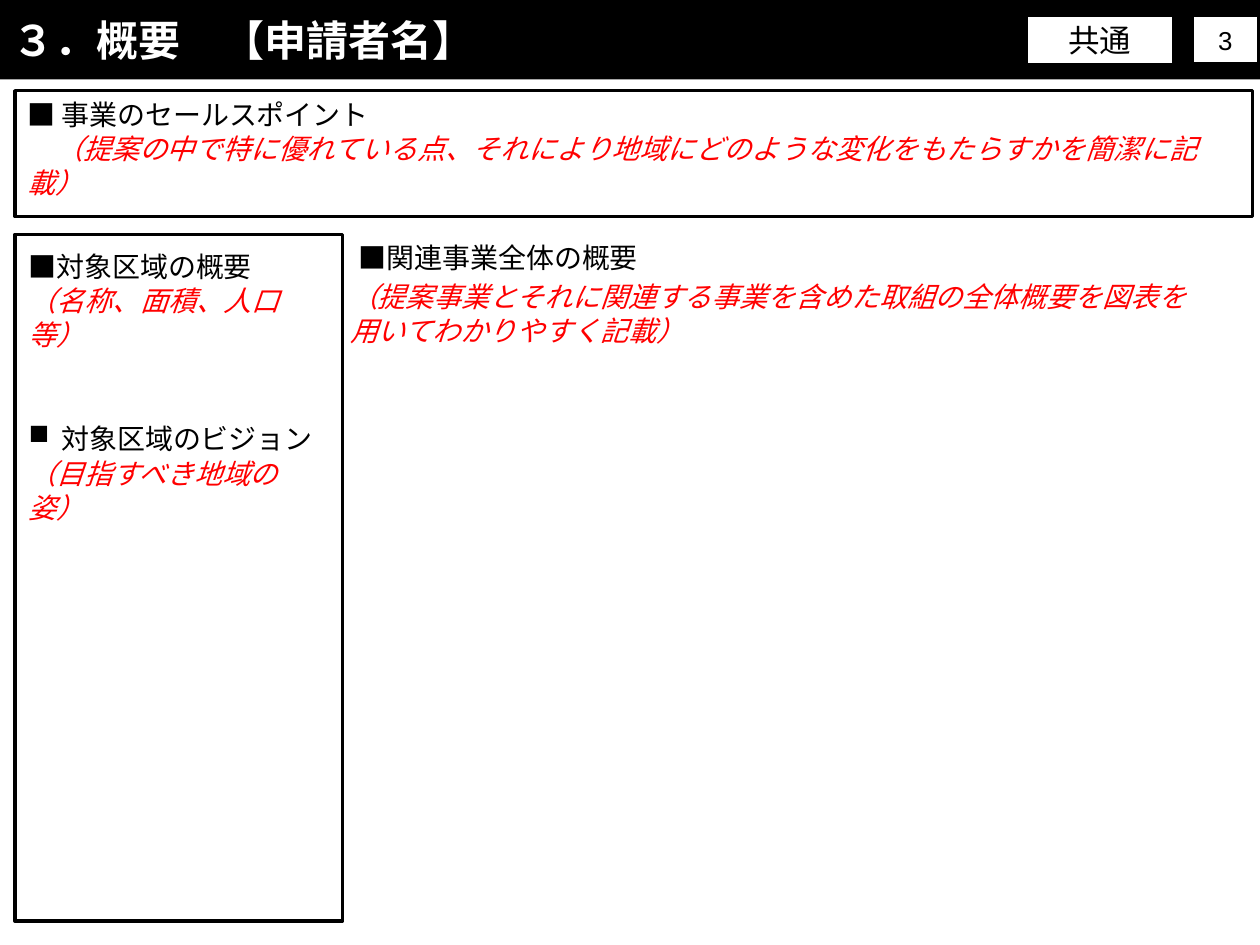
import dataclasses

import lxml.etree
import pptx
import pptx.dml.color
import pptx.enum.shapes
import pptx.enum.text
import pptx.oxml.ns
import pptx.util

COLUMNS, ROWS = 100, 75
CELL = pptx.util.Inches(0.1)


@dataclasses.dataclass(frozen=True)
class Theme:
    black: str = "000000"
    white: str = "FFFFFF"
    guidance: str = "FF0000"
    latin: str = "Arial"
    japanese: str = "Noto Sans CJK JP"
    bullet_item: str = "Cabin"
    title_size: float = 24
    label_size: float = 18
    number_size: float = 14.8
    body_size: float = 16
    body_line: float = 19.4


THEME = Theme()


def color(value):
    return pptx.dml.color.RGBColor.from_string(value)


def place(column, row, width, height):
    return [round(length * CELL) for length in (column, row, width, height)]


def add_box(slide, area, fill=None, line=None, line_width=2):
    box = slide.shapes.add_shape(
        pptx.enum.shapes.MSO_SHAPE.RECTANGLE, *place(*area))
    box.shadow.inherit = False
    if fill:
        box.fill.solid()
        box.fill.fore_color.rgb = color(fill)
    else:
        box.fill.background()
    if line:
        box.line.color.rgb = color(line)
        box.line.width = pptx.util.Pt(line_width)
    else:
        box.line.fill.background()
    return box


def add_text_area(slide, area):
    return slide.shapes.add_textbox(*place(*area))


def set_font(paragraph, name, size, value, bold=False, italic=False):
    font = paragraph.font
    font.name = name
    font.size = pptx.util.Pt(size)
    font.color.rgb = color(value)
    font.bold = bold
    font.italic = italic
    latin = font._element.find(pptx.oxml.ns.qn("a:latin"))
    east_asian = lxml.etree.Element(pptx.oxml.ns.qn("a:ea"))
    east_asian.set("typeface", THEME.japanese)
    latin.addnext(east_asian)


def add_bullet(paragraph, character, indent):
    properties = paragraph._p.get_or_add_pPr()
    properties.set("marL", str(indent))
    properties.set("indent", str(-indent))
    bullet = lxml.etree.Element(pptx.oxml.ns.qn("a:buChar"))
    bullet.set("char", character)
    properties.find(pptx.oxml.ns.qn("a:defRPr")).addprevious(bullet)


def write_label(box, text, size, name=THEME.latin, value=THEME.black,
                bold=False, align=pptx.enum.text.PP_ALIGN.CENTER):
    frame = box.text_frame
    frame.word_wrap = True
    frame.vertical_anchor = pptx.enum.text.MSO_ANCHOR.MIDDLE
    paragraph = frame.paragraphs[0]
    paragraph.text = text
    paragraph.alignment = align
    set_font(paragraph, name, size, value, bold)


def write_body(box, entries):
    frame = box.text_frame
    frame.word_wrap = True
    frame.vertical_anchor = pptx.enum.text.MSO_ANCHOR.TOP
    for index, (text, is_guidance, name, space) in enumerate(entries):
        paragraph = frame.add_paragraph() if index else frame.paragraphs[0]
        paragraph.text = text
        paragraph.alignment = pptx.enum.text.PP_ALIGN.LEFT
        paragraph.line_spacing = pptx.util.Pt(THEME.body_line)
        paragraph.space_before = pptx.util.Pt(space)
        set_font(paragraph, name, THEME.body_size,
                 THEME.guidance if is_guidance else THEME.black,
                 italic=is_guidance)
    return frame


def add_header(slide):
    bar = add_box(slide, (0, 0, COLUMNS, 6.3), fill=THEME.black)
    write_label(bar, "３．概要　【申請者名】", THEME.title_size, THEME.japanese,
                THEME.white, True, pptx.enum.text.PP_ALIGN.LEFT)
    category = add_box(slide, (81.5, 1.3, 11.6, 3.8),
                       THEME.white, THEME.black, 1)
    write_label(category, "共通", THEME.label_size)
    number = add_box(slide, (94.7, 1.3, 5.1, 3.7),
                     THEME.white, THEME.black, 0.75)
    write_label(number, "3", THEME.number_size)


def add_sales_point(slide):
    box = add_box(slide, (1.2, 7.2, 98.2, 10), line=THEME.black)
    write_body(box, [
        ("■ 事業のセールスポイント", False, THEME.japanese, 0),
        ("　（提案の中で特に優れている点、それにより地域にどのような変化をもたらすかを簡潔に記載）",
         True, THEME.japanese, 0),
    ])


def add_target_area(slide):
    add_box(slide, (1.2, 18.6, 26, 54.5), line=THEME.black)
    frame = write_body(add_text_area(slide, (1.3, 19.3, 26, 23.4)), [
        ("■対象区域の概要", False, THEME.latin, 0),
        ("（名称、面積、人口等）", True, THEME.latin, 0),
        ("対象区域のビジョン", False, THEME.bullet_item, 40),
        ("（目指すべき地域の姿）", True, THEME.bullet_item, 0.8),
    ])
    add_bullet(frame.paragraphs[2], "■", pptx.util.Inches(0.26))


def add_related_projects(slide):
    write_body(add_text_area(slide, (27.5, 18.6, 72.2, 3.7)), [
        ("■関連事業全体の概要", False, THEME.latin, 0),
    ])
    write_body(add_text_area(slide, (26.8, 21.7, 70.4, 6.4)), [
        ("（提案事業とそれに関連する事業を含めた取組の全体概要を図表を用いてわかりやすく記載）",
         True, THEME.latin, 0),
    ])


def main():
    presentation = pptx.Presentation()
    presentation.slide_width = COLUMNS * CELL
    presentation.slide_height = ROWS * CELL
    slide = presentation.slides.add_slide(presentation.slide_layouts[6])
    add_header(slide)
    add_sales_point(slide)
    add_target_area(slide)
    add_related_projects(slide)
    presentation.save("out.pptx")


if __name__ == "__main__":
    main()
